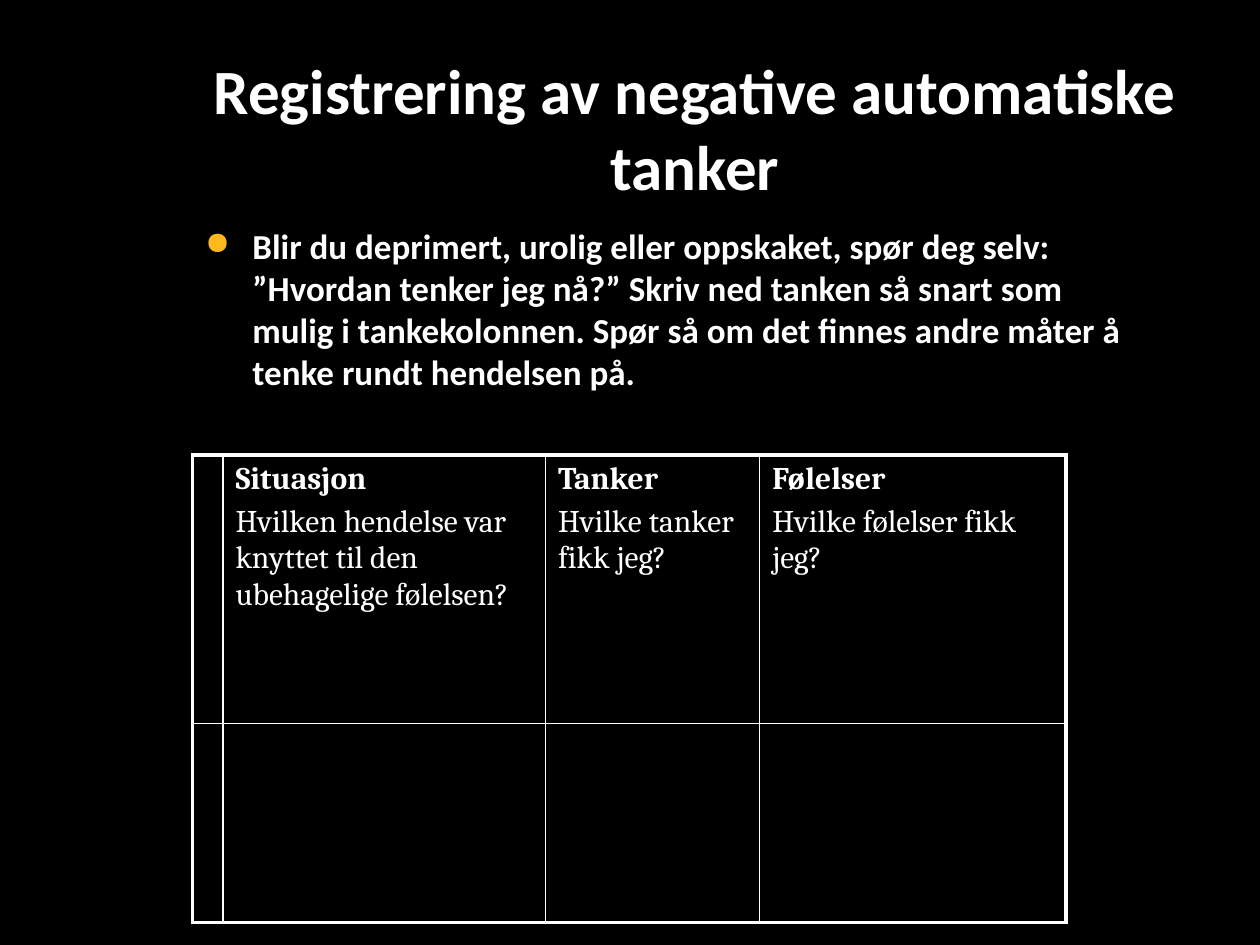
import pptx
import pptx.dml.color
import pptx.enum.text
import pptx.oxml
import pptx.oxml.ns
import pptx.util

Pt = pptx.util.Pt
WHITE = "FFFFFF"
BLACK = "000000"
AMBER = "FFB91D"
LEFT = 110.16
COLUMN_WIDTHS = (16.56, 184.32, 122.4, 174.96)
ROW_HEIGHTS = (153.36, 113.76)
HEADINGS = (
    ("Situasjon", "Hvilken hendelse var knyttet til den ubehagelige følelsen?"),
    ("Tanker", "Hvilke tanker fikk jeg?"),
    ("Følelser", "Hvilke følelser fikk jeg?"),
)
ADVICE = (
    "Blir du deprimert, urolig eller oppskaket, spør deg selv: "
    "”Hvordan tenker jeg nå?” Skriv ned tanken så snart som mulig i "
    "tankekolonnen. Spør så om det finnes andre måter å tenke rundt "
    "hendelsen på."
)


def color(value):
    """Turn a hex string into a colour."""
    return pptx.dml.color.RGBColor.from_string(value)


def add_xml(parent, markup):
    """Append one drawing element written as markup."""
    name, rest = markup.split(" ", 1)
    namespace = pptx.oxml.ns.nsdecls("a")
    parent.append(pptx.oxml.parse_xml(f"{name} {namespace} {rest}"))


def style_font(para, name, size, bold):
    """Set the white font of a paragraph."""
    font = para.font
    font.name = name
    font.size = Pt(size)
    font.bold = bold
    font.color.rgb = color(WHITE)


def add_bullet(para, indent):
    """Give a paragraph an amber dot and a hanging indent."""
    properties = para._p.get_or_add_pPr()
    properties.set("marL", str(Pt(indent)))
    properties.set("indent", str(-Pt(indent)))
    add_xml(properties, f'<a:buClr ><a:srgbClr val="{AMBER}"/></a:buClr>')
    add_xml(properties, '<a:buSzPct val="90000"/>')
    add_xml(properties, '<a:buChar char="●"/>')


def add_title(page, text):
    """Place and format the title."""
    box = page.shapes.title
    box.left, box.top, box.width, box.height = Pt(LEFT), Pt(41), Pt(573.84), Pt(63.36)
    frame = box.text_frame
    frame.text = text
    frame.vertical_anchor = pptx.enum.text.MSO_ANCHOR.MIDDLE
    para = frame.paragraphs[0]
    para.alignment = pptx.enum.text.PP_ALIGN.CENTER
    style_font(para, "Calibri", 36, True)


def add_advice(page, text):
    """Add the bulleted advice."""
    box = page.shapes.add_textbox(Pt(LEFT), Pt(124.56), Pt(550.8), Pt(314.64))
    frame = box.text_frame
    frame.word_wrap = True
    frame.text = text
    para = frame.paragraphs[0]
    para.space_before = Pt(4)
    add_bullet(para, 27)
    style_font(para, "Calibri", 20, True)


def set_borders(cell, widths):
    """Draw the left, right, top and bottom borders of a cell."""
    properties = cell._tc.get_or_add_tcPr()
    for side, width in zip("LRTB", widths):
        add_xml(
            properties,
            f'<a:ln{side} w="{Pt(width)}"><a:solidFill>'
            f'<a:srgbClr val="{WHITE}"/></a:solidFill></a:ln{side}>',
        )


def fill_heading(cell, lines):
    """Write a bold heading and a plain question into a cell."""
    cell.text = "\n".join(lines)
    for para, bold in zip(cell.text_frame.paragraphs, (True, False)):
        para.space_before = Pt(3.6)
        style_font(para, "Cambria", 18, bold)


def add_thought_table(page):
    """Add the table for recording thoughts."""
    rows, columns = len(ROW_HEIGHTS), len(COLUMN_WIDTHS)
    table = page.shapes.add_table(
        rows, columns, Pt(LEFT), Pt(260),
        Pt(sum(COLUMN_WIDTHS)), Pt(sum(ROW_HEIGHTS)),
    ).table
    table.first_row = table.horz_banding = False
    for column, width in zip(table.columns, COLUMN_WIDTHS):
        column.width = Pt(width)
    for row, height in zip(table.rows, ROW_HEIGHTS):
        row.height = Pt(height)
    for row in range(rows):
        for column in range(columns):
            cell = table.cell(row, column)
            outer = (column == 0, column == columns - 1, row == 0, row == rows - 1)
            set_borders(cell, [2.25 if edge else 1 for edge in outer])
            cell.fill.solid()
            cell.fill.fore_color.rgb = color(BLACK)
    for column, lines in enumerate(HEADINGS, start=1):
        fill_heading(table.cell(0, column), lines)


def main():
    """Build and save the deck."""
    deck = pptx.Presentation()
    deck.slide_width, deck.slide_height = Pt(720), Pt(540)
    page = deck.slides.add_slide(deck.slide_layouts[5])
    page.background.fill.solid()
    page.background.fill.fore_color.rgb = color(BLACK)
    add_title(page, "Registrering av negative automatiske tanker")
    add_advice(page, ADVICE)
    add_thought_table(page)
    deck.save("out.pptx")


if __name__ == "__main__":
    main()
